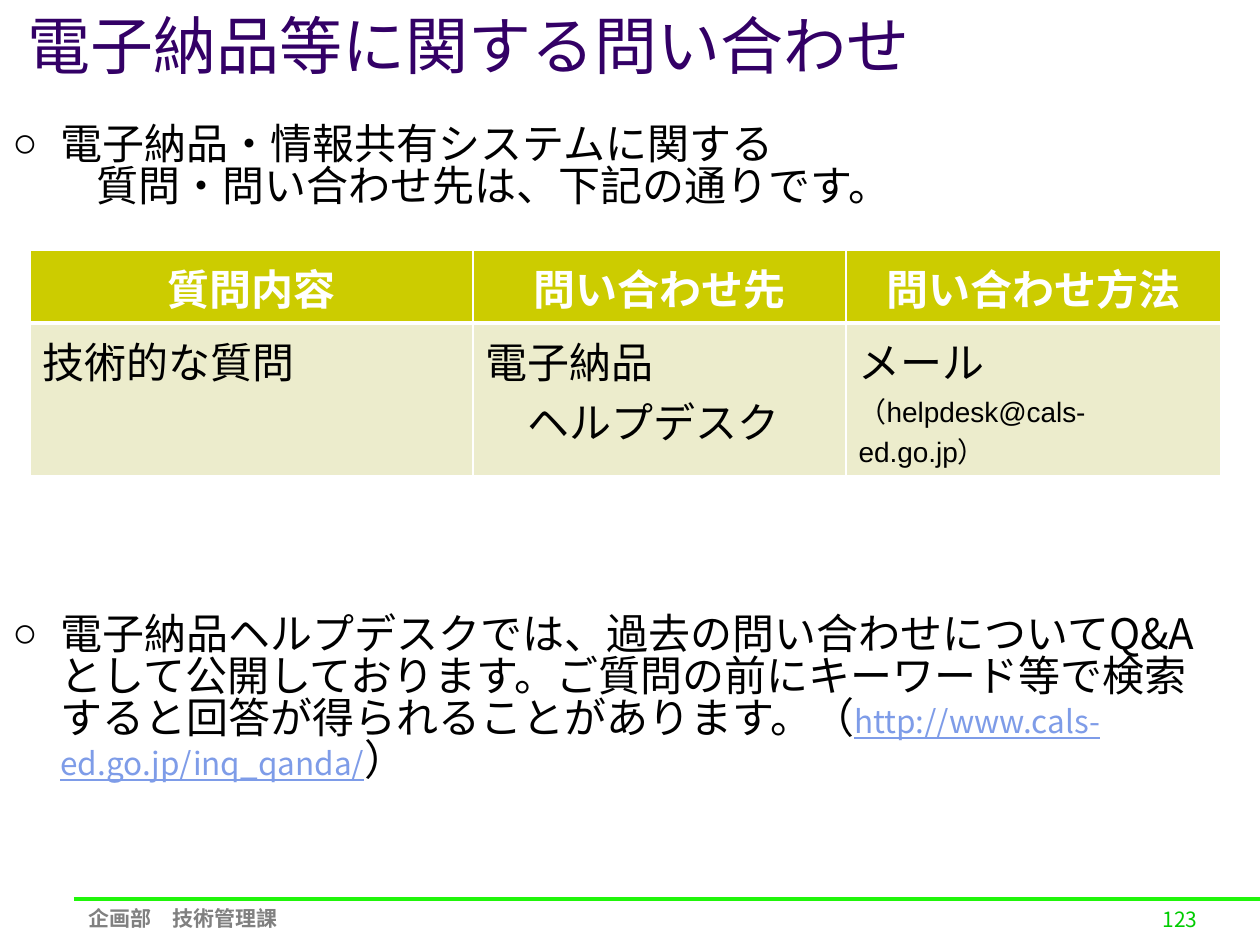
from lxml import etree
from pptx import Presentation
from pptx.dml.color import RGBColor
from pptx.enum.shapes import MSO_CONNECTOR
from pptx.enum.text import MSO_ANCHOR, PP_ALIGN
from pptx.oxml.ns import qn
from pptx.util import Pt

PX = 914400 / 126
TOP, MIDDLE = MSO_ANCHOR.TOP, MSO_ANCHOR.MIDDLE
LEFT, CENTER = PP_ALIGN.LEFT, PP_ALIGN.CENTER
STRAIGHT = MSO_CONNECTOR.STRAIGHT

SANS, ARIAL = "Noto Sans CJK JP", "Arial"
BLACK = RGBColor(0x00, 0x00, 0x00)
WHITE = RGBColor(0xFF, 0xFF, 0xFF)
PURPLE = RGBColor(0x33, 0x00, 0x66)
GREEN = RGBColor(0x00, 0xCC, 0x00)
LIME = RGBColor(0x20, 0xF6, 0x0A)
GRAY = RGBColor(0x80, 0x80, 0x80)
BLUE = RGBColor(0x7E, 0x9C, 0xE8)
OLIVE = RGBColor(0xCC, 0xCC, 0x00)
CREAM = RGBColor(0xEC, 0xEC, 0xCC)


def px(n):
    return round(n * PX)


def style(p, size, font, color, bold=False):
    """Format every run of a paragraph, for Latin and Japanese letters alike."""
    for r in p.runs:
        r.font.size = Pt(size)
        r.font.name = font
        r.font.bold = bold
        r.font.color.rgb = color
        etree.SubElement(r.font._element, qn("a:ea"), typeface=SANS)


prs = Presentation()
prs.slide_width, prs.slide_height = px(1260), px(945)
s = prs.slides.add_slide(prs.slide_layouts[6])

# Footer rule
rule = s.shapes.add_connector(STRAIGHT, px(74), px(899), px(1260), px(899))
rule.line.color.rgb = LIME
rule.line.width = Pt(2.25)
etree.SubElement(rule._element.spPr, qn("a:effectLst"))

# Page number, department and title
labels = [
    ("123", (1150, 900, 110, 45), 12, SANS, GREEN, False, LEFT, TOP, True),
    ("企画部　技術管理課", (49, 905, 268, 26), 12, ARIAL, GRAY, True, CENTER, MIDDLE, False),
    ("電子納品等に関する問い合わせ", (15, 0, 1191, 89), 36, SANS, PURPLE, False, LEFT, MIDDLE, True),
]
for text, box, size, font, color, bold, align, anchor, wrap in labels:
    tf = s.shapes.add_textbox(*map(px, box)).text_frame
    tf.word_wrap = wrap
    tf.vertical_anchor = anchor
    tf.text = text
    tf.paragraphs[0].alignment = align
    style(tf.paragraphs[0], size, font, color, bold)

# Contact table
rows = [
    ["質問内容", "問い合わせ先", "問い合わせ方法"],
    ["技術的な質問", "電子納品\nヘルプデスク", "メール\n（helpdesk@cals-ed.go.jp）"],
]
col_widths, row_heights = [443, 373, 375], [73, 153]
table = s.shapes.add_table(2, 3, px(30), px(250), px(sum(col_widths)), px(sum(row_heights))).table
for col, width in zip(table.columns, col_widths):
    col.width = px(width)
for row, height in zip(table.rows, row_heights):
    row.height = px(height)

for i, texts in enumerate(rows):
    header = i == 0
    for j, text in enumerate(texts):
        cell = table.cell(i, j)
        cell.text = text
        for p in cell.text_frame.paragraphs:
            p.alignment = CENTER if header else LEFT
            size = 16 if "@" in p.text else 24
            style(p, size, ARIAL, WHITE if header else BLACK, header)
        tcPr = cell._tc.get_or_add_tcPr()
        for side in ("lnL", "lnR", "lnT", "lnB"):
            # The edge between the header and the body is thicker
            thick = side == ("lnB" if header else "lnT")
            ln = etree.SubElement(tcPr, qn("a:" + side), w=str(Pt(3 if thick else 1)))
            fill = etree.SubElement(ln, qn("a:solidFill"))
            etree.SubElement(fill, qn("a:srgbClr"), val=str(WHITE))
        cell.fill.solid()
        cell.fill.fore_color.rgb = OLIVE if header else CREAM
helpdesk = table.cell(1, 1).text_frame.paragraphs[1]
helpdesk._p.get_or_add_pPr().set("marL", str(px(42)))

# Notes above and below the table: each paragraph is a list of runs
notes = [
    ((0, 120, 1235, 120), [
        ["電子納品・情報共有システムに関する"],
        ["質問・問い合わせ先は、下記の通りです。"],
    ]),
    ((0, 610, 1235, 215), [
        ["電子納品ヘルプデスクでは、過去の問い合わせについてQ&Aとして公開しております。"
         "ご質問の前にキーワード等で検索すると回答が得られることがあります。（",
         "http://www.cals-ed.go.jp/inq_qanda/", "）"],
    ]),
]
for box, paragraphs in notes:
    tf = s.shapes.add_textbox(*map(px, box)).text_frame
    tf.word_wrap = True
    for i, texts in enumerate(paragraphs):
        p = tf.add_paragraph() if i else tf.paragraphs[0]
        pPr = p._p.get_or_add_pPr()
        if i == 0:
            pPr.set("marL", str(px(48)))
            pPr.set("indent", str(px(-48)))
            etree.SubElement(pPr, qn("a:buFont"), typeface=ARIAL)
            etree.SubElement(pPr, qn("a:buChar"), char="○")
        else:
            pPr.set("marL", str(px(84)))
        p.line_spacing = 0.83
        for text in texts:
            p.add_run().text = text
        style(p, 24, SANS, BLACK)
        for r in p.runs:
            if r.text.startswith("http"):
                r.font.size = Pt(18)
                r.font.underline = True
                r.font.color.rgb = BLUE

prs.save("out.pptx")
